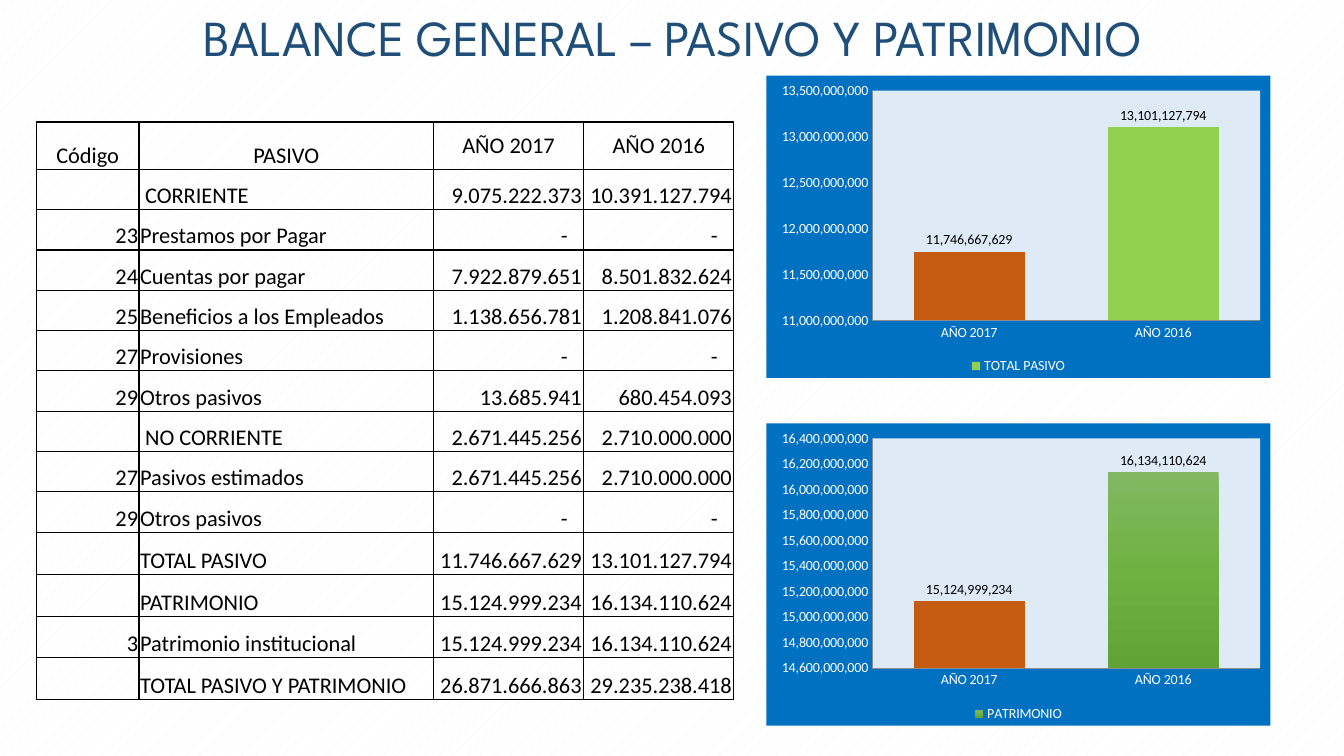
import copy
import pptx
from lxml import etree
from pptx.chart.data import CategoryChartData
from pptx.dml.color import RGBColor
from pptx.enum.chart import XL_CHART_TYPE, XL_LABEL_POSITION, XL_LEGEND_POSITION, XL_TICK_MARK
from pptx.enum.dml import MSO_PATTERN
from pptx.enum.text import MSO_ANCHOR, PP_ALIGN
from pptx.oxml import parse_xml
from pptx.oxml.ns import nsdecls, qn
from pptx.util import Inches, Pt

TITLE = "BALANCE GENERAL – PASIVO Y PATRIMONIO"
YEARS = ["AÑO 2017", "AÑO 2016"]
HEAD = ["Código", "PASIVO"] + YEARS
ROWS = [
    ("", "CORRIENTE", 9075222373, 10391127794),
    ("23", "Prestamos por Pagar", 0, 0),
    ("24", "Cuentas por pagar", 7922879651, 8501832624),
    ("25", "Beneficios a los Empleados", 1138656781, 1208841076),
    ("27", "Provisiones", 0, 0),
    ("29", "Otros pasivos", 13685941, 680454093),
    ("", "NO CORRIENTE", 2671445256, 2710000000),
    ("27", "Pasivos estimados", 2671445256, 2710000000),
    ("29", "Otros pasivos", 0, 0),
    ("", "TOTAL PASIVO", 11746667629, 13101127794),
    ("", "PATRIMONIO", 15124999234, 16134110624),
    ("3", "Patrimonio institucional", 15124999234, 16134110624),
    ("", "TOTAL PASIVO Y PATRIMONIO", 26871666863, 29235238418),
]
INDENTED = ("CORRIENTE", "NO CORRIENTE")
WIDTHS = [1.02, 2.92, 1.49, 1.49]
HEIGHTS = [0.47] + [0.4] * 9 + [0.42, 0.42, 0.4, 0.42]

BLACK = RGBColor(0x00, 0x00, 0x00)
WHITE = RGBColor(0xFF, 0xFF, 0xFF)
NAVY = RGBColor(0x1F, 0x4E, 0x79)
BLUE = RGBColor(0x00, 0x70, 0xC0)
PALE = RGBColor(0xDE, 0xEB, 0xF7)
MIST = RGBColor(0xEA, 0xEF, 0xF7)
GRAY = RGBColor(0x8C, 0x8C, 0x8C)
RUST = RGBColor(0xC5, 0x5A, 0x11)
LIME = RGBColor(0x92, 0xD0, 0x50)
GREENS = [RGBColor(0x81, 0xB8, 0x61), RGBColor(0x6F, 0xB2, 0x42), RGBColor(0x62, 0xA3, 0x36)]

# name, top, axis minimum, maximum and step, colours of the second bar
CHARTS = [
    ("TOTAL PASIVO", 0.75, 11.0e9, 13.5e9, 0.5e9, [LIME]),
    ("PATRIMONIO", 4.2, 14.6e9, 16.4e9, 0.2e9, GREENS),
]
PLOT = {"x": 0.21, "y": 0.05, "w": 0.77, "h": 0.76}


def style(font, size, color, name="Calibri"):
    font.size, font.name = Pt(size), name
    font.color.rgb = color


def border(cell):
    props = cell._tc.get_or_add_tcPr()
    for side in ("lnL", "lnR", "lnT", "lnB"):
        props.append(parse_xml(
            f'<a:{side} {nsdecls("a")} w="12700"><a:solidFill>'
            f'<a:srgbClr val="{BLACK}"/></a:solidFill></a:{side}>'))


def write(cell, text, align, anchor=MSO_ANCHOR.BOTTOM, left=0.01, right=0.01):
    border(cell)
    cell.fill.background()
    cell.margin_left, cell.margin_right = Inches(left), Inches(right)
    cell.margin_top, cell.margin_bottom = Inches(0.01), 0
    cell.vertical_anchor = anchor
    cell.text = text
    para = cell.text_frame.paragraphs[0]
    para.alignment = align
    style(para.font, 16, BLACK)


def add_table(slide):
    table = slide.shapes.add_table(
        len(HEIGHTS), len(WIDTHS), Inches(0.36), Inches(1.21),
        Inches(sum(WIDTHS)), Inches(sum(HEIGHTS))).table
    table.first_row = table.horz_banding = False
    for col, width in zip(table.columns, WIDTHS):
        col.width = Inches(width)
    for row, height in zip(table.rows, HEIGHTS):
        row.height = Inches(height)
    for c, text in enumerate(HEAD):
        anchor = MSO_ANCHOR.MIDDLE if text in YEARS else MSO_ANCHOR.BOTTOM
        write(table.cell(0, c), text, PP_ALIGN.CENTER, anchor)
    for r, (code, name, *sums) in enumerate(ROWS, 1):
        write(table.cell(r, 0), code, PP_ALIGN.RIGHT)
        write(table.cell(r, 1), name, PP_ALIGN.LEFT,
              left=0.06 if name in INDENTED else 0.01)
        for c, value in enumerate(sums, 2):
            text = f"{value:,}".replace(",", ".") if value else "-"
            write(table.cell(r, c), text, PP_ALIGN.RIGHT,
                  right=0.02 if value else 0.16)


def paint(fill, colors):
    """Fill with one colour, or with three from top to bottom."""
    if len(colors) == 1:
        fill.solid()
        fill.fore_color.rgb = colors[0]
        return
    fill.gradient()
    fill.gradient_angle = 270
    first = fill.gradient_stops[0]._gs
    first.addnext(copy.deepcopy(first))
    for stop, color, place in zip(fill.gradient_stops, colors, (0, 0.5, 1)):
        stop.color.rgb = color
        stop.position = place


def back(holder, color, before):
    """Give a chart part a plain fill, placed ahead of the named children."""
    props = parse_xml(
        f'<c:spPr {nsdecls("c", "a")}><a:solidFill><a:srgbClr val="{color}"/>'
        '</a:solidFill><a:ln><a:noFill/></a:ln></c:spPr>')
    late = [child for child in holder if child.tag in map(qn, before)]
    if late:
        late[0].addprevious(props)
    else:
        holder.append(props)


def place_plot(area):
    for old in area.findall(qn("c:layout")):
        area.remove(old)
    layout = etree.Element(qn("c:layout"))
    manual = etree.SubElement(layout, qn("c:manualLayout"))
    parts = [("layoutTarget", "inner"), ("xMode", "edge"), ("yMode", "edge")]
    for tag, val in parts + list(PLOT.items()):
        etree.SubElement(manual, qn("c:" + tag)).set("val", str(val))
    area.insert(0, layout)


def add_chart(slide, name, top, low, high, step, colors):
    data = CategoryChartData()
    data.categories = YEARS
    data.add_series(name, next(row[2:] for row in ROWS if row[1] == name))
    chart = slide.shapes.add_chart(
        XL_CHART_TYPE.COLUMN_CLUSTERED, Inches(7.6), Inches(top),
        Inches(5), Inches(3), data).chart
    style(chart.font, 10, BLACK)
    chart.has_title = False
    chart.has_legend = True
    chart.legend.position = XL_LEGEND_POSITION.BOTTOM
    chart.legend.include_in_layout = False
    style(chart.legend.font, 10, WHITE)

    for axis in (chart.category_axis, chart.value_axis):
        axis.major_tick_mark = axis.minor_tick_mark = XL_TICK_MARK.NONE
        axis.has_major_gridlines = False
        style(axis.tick_labels.font, 10, WHITE)
        axis.format.line.color.rgb = GRAY
        axis.format.line.width = Pt(0.5)
    scale = chart.value_axis
    scale.minimum_scale, scale.maximum_scale, scale.major_unit = low, high, step
    scale.tick_labels.number_format = "#,##0"
    scale.tick_labels.number_format_is_linked = False

    plot = chart.plots[0]
    plot.gap_width = 75
    plot.vary_by_categories = False
    bars = plot.series[0]
    paint(bars.format.fill, colors)
    paint(bars.points[0].format.fill, [RUST])
    labels = bars.data_labels
    labels.show_value = True
    labels.position = XL_LABEL_POSITION.OUTSIDE_END
    labels.number_format = "#,##0"
    labels.number_format_is_linked = False
    style(labels.font, 10, BLACK)

    space = chart._chartSpace
    area = space.chart.plotArea
    place_plot(area)
    back(area, PALE, ["c:extLst"])
    back(space, BLUE, ["c:txPr", "c:externalData"])


def main():
    deck = pptx.Presentation()
    deck.slide_width, deck.slide_height = Inches(13.33), Inches(7.5)
    slide = deck.slides.add_slide(deck.slide_layouts[6])
    fill = slide.background.fill
    fill.patterned()
    fill.pattern = MSO_PATTERN.PERCENT_5
    fill.fore_color.rgb, fill.back_color.rgb = MIST, WHITE

    frame = slide.shapes.add_textbox(
        Inches(1.07), Inches(0.01), Inches(11.2), Inches(0.71)).text_frame
    frame.word_wrap = True
    para = frame.paragraphs[0]
    para.text = TITLE
    para.alignment = PP_ALIGN.CENTER
    style(para.font, 36, NAVY, "League Spartan")

    add_table(slide)
    for item in CHARTS:
        add_chart(slide, *item)
    deck.save("out.pptx")


if __name__ == "__main__":
    main()
